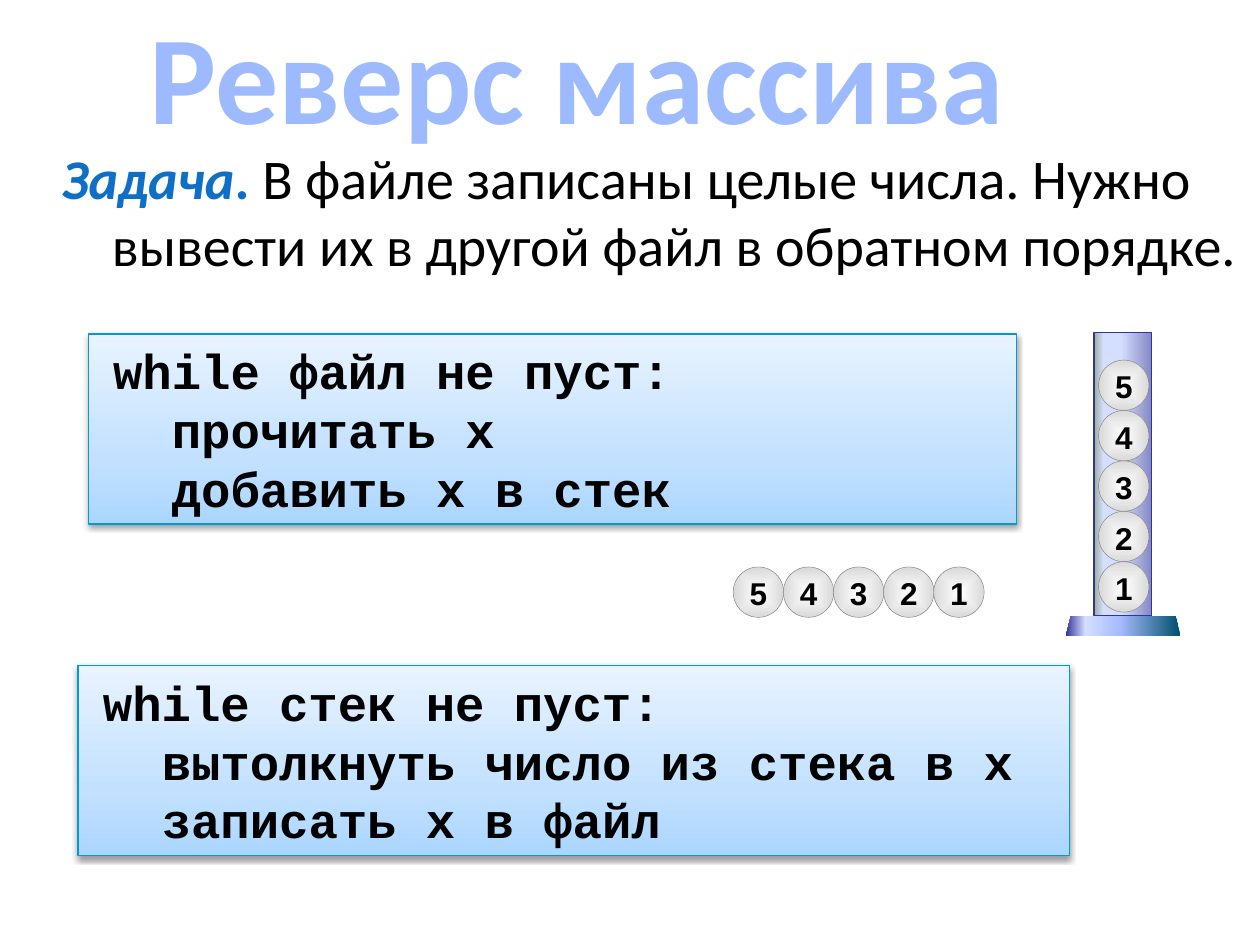
from pptx import Presentation
from pptx.dml.color import RGBColor
from pptx.enum import shapes, text
from pptx.oxml import parse_xml
from pptx.util import Pt

NS = 'xmlns:a="http://schemas.openxmlformats.org/drawingml/2006/main"'
COLORS = {
    "title": "9EBAFF", "accent": "0F6FC6", "ink": "000000",
    "code_line": "009AD4", "rod_line": "333399", "ball_line": "808080",
}
# Gradient stops: percent, colour
GRADIENTS = {
    "rod": [(0, "8488C4"), (53, "D4DEFF"), (83, "D4DEFF"), (100, "96AB94")],
    "base": [(0, "004E6C"), (53, "A7BCFF"), (83, "D4DEFF"), (100, "333399")],
    "code": [(0, "ABD6FF"), (35, "C3E1FF"), (100, "E8F3FF")],
    "ball": [(0, "FFFFFF"), (100, "D9D9D9")],
}
TITLE = "Реверс массива"
TASK = [
    ("Задача", "accent", True, True),
    (". ", "accent", True, False),
    ("В файле записаны целые числа. Нужно вывести их в другой файл "
     "в обратном порядке.", "ink", False, False),
]
# Code boxes: left, top, width, lines as (level, text)
CODE_BOXES = [
    (50.4, 190.8, 530.6, [(0, "while файл не пуст:"), (1, "прочитать x"),
                          (1, "добавить x в стек")]),
    (44.6, 380.2, 566.6, [(0, "while стек не пуст:"),
                          (1, "вытолкнуть число из стека в x"),
                          (1, "записать x в файл")]),
]
NUMBERS = ["5", "4", "3", "2", "1"]
CODE_HEIGHT = 108.7
CODE_INDENT, LEVEL_INDENT = 7.2, 33.6
BALL = 28.8
STACK_LEFT, STACK_TOP = 627.8, 205.8
ROW_LEFT, ROW_TOP, ROW_STEP = 419, 324, 28.65


def style(run, font, size, color, bold=True, italic=False):
    run.font.name, run.font.size = font, Pt(size)
    run.font.bold, run.font.italic = bold, italic
    run.font.color.rgb = RGBColor.from_string(COLORS[color])


def set_indent(paragraph, margin, first_line):
    properties = paragraph._p.get_or_add_pPr()
    properties.set("marL", str(Pt(margin)))
    properties.set("indent", str(Pt(first_line)))


def fill_gradient(shape, name, angle=None):
    """Fill along an angle in degrees, or outward from the centre without one."""
    stops = "".join(f'<a:gs pos="{pos * 1000}"><a:srgbClr val="{color}"/></a:gs>'
                    for pos, color in GRADIENTS[name])
    if angle is None:
        direction = ('<a:path path="shape"><a:fillToRect l="50000" t="50000" '
                     'r="50000" b="50000"/></a:path>')
    else:
        direction = f'<a:lin ang="{angle * 60000}" scaled="0"/>'
    gradient = parse_xml(f'<a:gradFill {NS} rotWithShape="1"><a:gsLst>{stops}'
                         f'</a:gsLst>{direction}</a:gradFill>')
    shape._element.spPr.find("{*}prstGeom").addnext(gradient)


def add_filled(slide, kind, box, gradient, angle=None, line=None, width=1):
    shape = slide.shapes.add_shape(kind, *map(Pt, box))
    shape.shadow.inherit = False
    fill_gradient(shape, gradient, angle)
    if line:
        shape.line.color.rgb = RGBColor.from_string(COLORS[line])
        shape.line.width = Pt(width)
    else:
        shape.line.fill.background()
    return shape


def add_textbox(slide, box):
    frame = slide.shapes.add_textbox(*map(Pt, box)).text_frame
    frame.word_wrap = True
    return frame


def add_code(slide, left, top, width, lines):
    block = add_filled(slide, shapes.MSO_SHAPE.RECTANGLE,
                       (left, top, width, CODE_HEIGHT), "code", 270,
                       "code_line", 0.75)
    block._element.spPr.find("{*}effectLst").append(parse_xml(
        f'<a:outerShdw {NS} blurRad="{Pt(3.1)}" dist="{Pt(1.6)}" dir="5400000" '
        'rotWithShape="0"><a:srgbClr val="000000"><a:alpha val="38000"/>'
        '</a:srgbClr></a:outerShdw>'))
    frame = block.text_frame
    frame.vertical_anchor = text.MSO_ANCHOR.MIDDLE
    frame.text = "\n".join(line for _, line in lines)
    for paragraph, (level, _) in zip(frame.paragraphs, lines):
        paragraph.alignment = text.PP_ALIGN.LEFT
        set_indent(paragraph, level * LEVEL_INDENT, CODE_INDENT)
        style(paragraph.runs[0], "Courier New", 28, "ink")


def add_ball(slide, left, top, number):
    ball = add_filled(slide, shapes.MSO_SHAPE.OVAL, (left, top, BALL, BALL),
                      "ball", line="ball_line", width=0.25)
    frame = ball.text_frame
    frame.margin_left = frame.margin_right = 0
    frame.margin_top = frame.margin_bottom = 0
    frame.vertical_anchor = text.MSO_ANCHOR.TOP
    frame.text = number
    frame.paragraphs[0].alignment = text.PP_ALIGN.CENTER
    style(frame.paragraphs[0].runs[0], "Arial", 18, "ink")


def main():
    deck = Presentation()
    deck.slide_width, deck.slide_height = Pt(720), Pt(540)
    slide = deck.slides.add_slide(deck.slide_layouts[6])

    add_filled(slide, shapes.MSO_SHAPE.RECTANGLE, (625, 190, 33.1, 162),
               "rod", 180, "rod_line")
    add_filled(slide, shapes.MSO_SHAPE.TRAPEZOID, (609.1, 352, 65.5, 11.5),
               "base", 180)

    title = add_textbox(slide, (0, 23.8, 659.5, 37.4))
    title.vertical_anchor = text.MSO_ANCHOR.MIDDLE
    title.text = TITLE
    title.paragraphs[0].alignment = text.PP_ALIGN.CENTER
    style(title.paragraphs[0].runs[0], "Calibri", 72, "title")

    task = add_textbox(slide, (28.1, 78.5, 691.9, 85)).paragraphs[0]
    set_indent(task, 28.8, -28.8)
    for words, color, bold, italic in TASK:
        run = task.add_run()
        run.text = words
        style(run, "Calibri", 32, color, bold, italic)

    for code_box in CODE_BOXES:
        add_code(slide, *code_box)
    for i, number in enumerate(NUMBERS):
        add_ball(slide, STACK_LEFT, STACK_TOP + i * BALL, number)
    for i, number in enumerate(NUMBERS):
        add_ball(slide, ROW_LEFT + i * ROW_STEP, ROW_TOP, number)

    deck.save("out.pptx")


if __name__ == "__main__":
    main()
